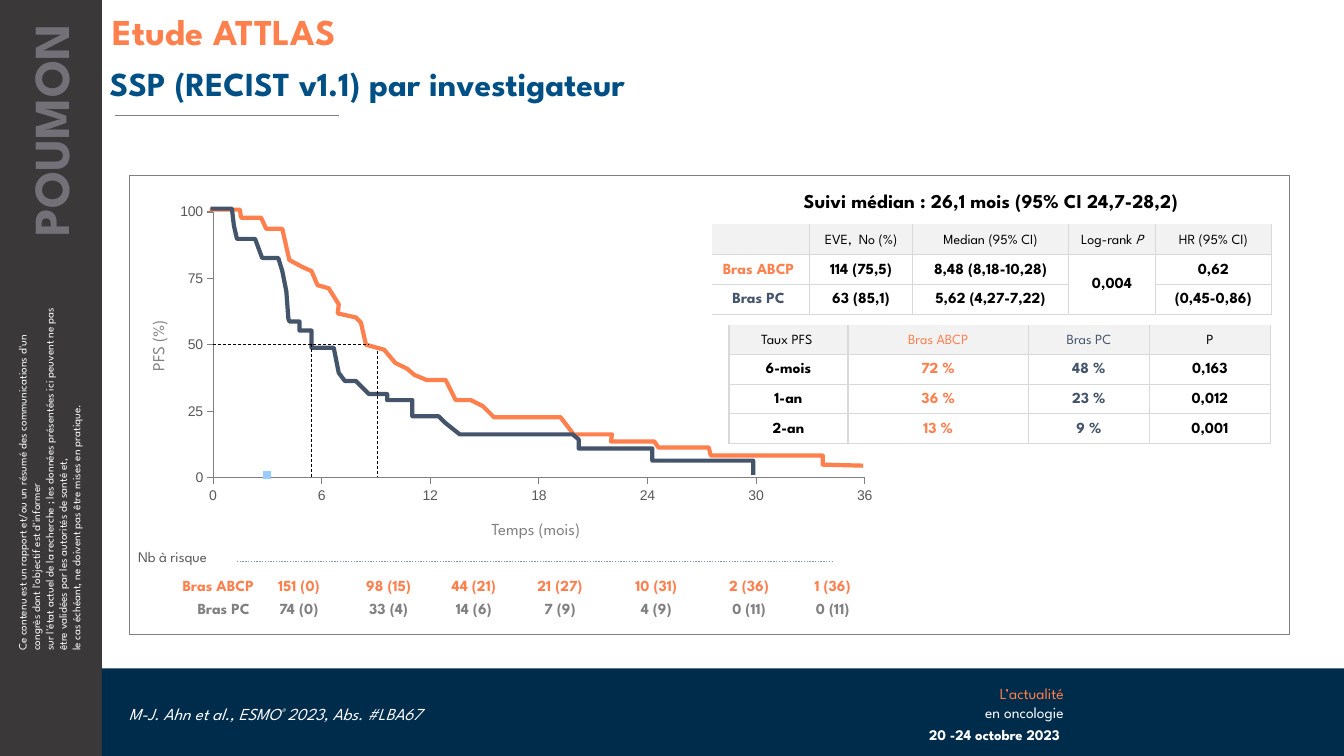
import pptx
import pptx.chart.data
import pptx.dml.color
import pptx.enum.chart
import pptx.enum.dml
import pptx.enum.shapes
import pptx.enum.text
import pptx.oxml
import pptx.oxml.ns
import pptx.util
from dataclasses import dataclass

Inches = pptx.util.Inches
Pt = pptx.util.Pt
Align = pptx.enum.text.PP_ALIGN
Anchor = pptx.enum.text.MSO_ANCHOR
Dash = pptx.enum.dml.MSO_LINE
Shape = pptx.enum.shapes.MSO_SHAPE
qn = pptx.oxml.ns.qn


@dataclass(frozen=True)
class Theme:
    font: str = "League Spartan"
    plain: str = "Arial"
    orange: str = "FF7F4D"
    slate: str = "44546A"
    blue: str = "005086"
    navy: str = "002C4C"
    coal: str = "3A3839"
    mauve: str = "737078"
    gray: str = "808080"
    dark: str = "595959"
    grid: str = "D9D9D9"
    pale: str = "F2F2F2"
    steel: str = "8497B0"
    sky: str = "99CCFF"
    white: str = "FFFFFF"
    black: str = "000000"
    title: float = 26
    head: float = 24
    side: float = 36
    lead: float = 14
    body: float = 12
    cell: float = 11
    date: float = 10.5
    small: float = 10
    tiny: float = 8


T = Theme()
NONE = "{2D5ABB26-0587-4C30-8999-92F81FD0307C}"
ABCP = [
    (2.08, 2.08), (2.38, 2.08), (2.39, 2.16), (2.59, 2.16), (2.64, 2.27), (2.8, 2.27),
    (2.87, 2.58), (3, 2.65), (3.09, 2.69), (3.15, 2.83), (3.26, 2.86), (3.36, 3.02),
    (3.35, 3.11), (3.53, 3.15), (3.58, 3.2), (3.63, 3.42), (3.81, 3.47), (3.92, 3.6),
    (4.04, 3.66), (4.11, 3.72), (4.23, 3.77), (4.42, 3.77), (4.52, 3.97), (4.67, 3.97),
    (4.79, 4.03), (4.9, 4.14), (5.56, 4.14), (5.69, 4.31), (6.07, 4.31), (6.06, 4.38),
    (6.49, 4.38), (6.53, 4.44), (7.03, 4.44), (7.05, 4.52), (8.16, 4.52), (8.16, 4.61),
    (8.56, 4.62)]
PC = [
    (2.09, 2.07), (2.3, 2.07), (2.32, 2.24), (2.35, 2.37), (2.53, 2.37), (2.6, 2.56),
    (2.76, 2.56), (2.8, 2.69), (2.84, 2.89), (2.86, 3.16), (2.87, 3.19), (2.97, 3.19),
    (2.97, 3.28), (3.09, 3.28), (3.09, 3.45), (3.31, 3.45), (3.36, 3.7), (3.42, 3.78),
    (3.53, 3.78), (3.66, 3.91), (3.84, 3.91), (3.84, 3.97), (4.09, 3.97), (4.09, 4.13),
    (4.35, 4.13), (4.41, 4.19), (4.56, 4.31), (5.68, 4.31), (5.74, 4.36), (5.74, 4.45),
    (6.47, 4.45), (6.47, 4.57), (7.47, 4.57), (7.47, 4.71)]


def rgb(tone):
    return pptx.dml.color.RGBColor.from_string(tone)


def put(frame, parts, size, tone, bold=False, align=Align.LEFT, space=None):
    para = frame.paragraphs[0]
    para.alignment = align
    para.line_spacing = space
    for part in [parts] if isinstance(parts, str) else parts:
        if part == "\n":
            para.add_line_break()
            continue
        word, style = (part, {}) if isinstance(part, str) else part
        run = para.add_run()
        run.text = word
        run.font.name = T.font
        run.font.size = Pt(size)
        run.font.bold = bold
        run.font.italic = style.get("italic", False)
        run.font.color.rgb = rgb(style.get("tone", tone))
        if "raise" in style:
            run.font._element.set("baseline", style["raise"])
    if not parts:
        para._p.append(pptx.oxml.parse_xml(
            f'<a:endParaRPr {pptx.oxml.ns.nsdecls("a")} sz="{size * 100}"/>'))


def label(slide, box, parts, size, tone, turn=0, anchor=Anchor.TOP, right=0.1, **look):
    shape = slide.shapes.add_textbox(*map(Inches, box))
    shape.rotation = turn
    frame = shape.text_frame
    frame.word_wrap = True
    frame.vertical_anchor = anchor
    frame.margin_right = Inches(right)
    put(frame, parts, size, tone, **look)


def panel(slide, box, fill=None, kind=Shape.RECTANGLE):
    shape = slide.shapes.add_shape(kind, *map(Inches, box))
    shape.shadow.inherit = False
    if fill:
        shape.fill.solid()
        shape.fill.fore_color.rgb = rgb(fill)
        shape.line.fill.background()
    else:
        shape.adjustments[0] = 0
        shape.fill.background()
        shape.line.color.rgb = rgb(T.gray)
        shape.line.width = Pt(0.75)


def rule(slide, ends, tone, width, dash=None):
    line = slide.shapes.add_connector(pptx.enum.shapes.MSO_CONNECTOR.STRAIGHT, *map(Inches, ends))
    line.line.color.rgb = rgb(tone)
    line.line.width = Pt(width)
    line.line.dash_style = dash
    line._element.spPr.append(pptx.oxml.parse_xml(f"<a:effectLst {pptx.oxml.ns.nsdecls('a')}/>"))


def curve(slide, points, tone):
    dots = [(Inches(x), Inches(y)) for x, y in points]
    form = slide.shapes.build_freeform(*dots[0])
    form.add_line_segments(dots[1:], close=False)
    shape = form.convert_to_shape()
    shape.shadow.inherit = False
    shape.fill.background()
    shape.line.color.rgb = rgb(tone)
    shape.line.width = Pt(3)


def table(slide, left, top, cols, rows):
    shape = slide.shapes.add_table(len(rows), len(cols), *map(Inches, (left, top, sum(cols), sum(rows))))
    grid = shape.table
    grid.first_row = grid.horz_banding = False
    grid._tbl.tblPr.find(qn("a:tableStyleId")).text = NONE
    for col, wide in zip(grid.columns, cols):
        col.width = Inches(wide)
    for row, high in zip(grid.rows, rows):
        row.height = Inches(high)
    return grid


def pad(cell, side, edge):
    cell.vertical_anchor = Anchor.MIDDLE
    cell.margin_left = cell.margin_right = Inches(side)
    cell.margin_top = cell.margin_bottom = Inches(edge)


def border(cell, sides):
    for side in sides:
        cell._tc.get_or_add_tcPr().append(pptx.oxml.parse_xml(
            f'<a:ln{side} {pptx.oxml.ns.nsdecls("a")} w="12700"><a:solidFill>'
            f'<a:srgbClr val="{T.grid}"/></a:solidFill></a:ln{side}>'))


def stats(slide, left, top, cols, rows, tones, open_left=False):
    grid = table(slide, left, top, cols, [0.28] * len(rows))
    for r, row in enumerate(rows):
        for c, parts in enumerate(row):
            cell = grid.cell(r, c)
            pad(cell, 0.05, 0.07)
            sides = "LRB" if r == 0 else "LRTB"
            border(cell, sides.replace("L", "") if open_left and c == 0 else sides)
            cell.fill.solid()
            cell.fill.fore_color.rgb = rgb(T.white if r else T.pale)
            put(cell.text_frame, parts, T.cell if r else T.small, tones(r, c),
                bold=r > 0, align=Align.CENTER, space=Pt(11.2))
    return grid


def risk(slide):
    grid = table(slide, 1.31, 5.38, [1.21, 0.89, 0.89, 0.8, 0.91, 1, 0.84, 0.82], [0.34, 0.23, 0.21])
    grid.cell(0, 0).merge(grid.cell(0, 7))
    pad(grid.cell(0, 0), 0.06, 0)
    put(grid.cell(0, 0).text_frame, "Nb à risque", T.date, T.dark)
    rows = [
        (T.orange, ["Bras ABCP", "151 (0)", "98 (15)", "44 (21)", "21 (27)", "10 (31)", "2 (36)", "1 (36)"]),
        (T.gray, ["Bras PC ", "74 (0)", "33 (4)", "14 (6)", "7 (9)", "4 (9)", "0 (11)", "0 (11)"])]
    for r, (tone, row) in enumerate(rows, 1):
        for c, word in enumerate(row):
            pad(grid.cell(r, c), 0, 0)
            put(grid.cell(r, c).text_frame, word, T.cell, tone, bold=True,
                align=Align.CENTER if c else Align.RIGHT)


def plot(slide):
    data = pptx.chart.data.XyChartData()
    series = data.add_series("Series 1")
    for value in (None, None, 1):
        series.add_data_point(None, value)
    kind = pptx.enum.chart.XL_CHART_TYPE.XY_SCATTER
    chart = slide.shapes.add_chart(kind, *map(Inches, (1.37, 2.01, 7.43, 3.14)), data).chart
    area = chart._chartSpace.chart.plotArea
    for point in list(area.iter(qn("c:pt"))):
        if point.findtext(qn("c:v")) in ("None", "", None):
            point.getparent().remove(point)
    chart.has_legend = chart.has_title = False
    chart.font.name = T.plain
    chart.font.size = Pt(T.small)
    chart.font.color.rgb = rgb(T.dark)
    for axis, top, step in ((chart.category_axis, 36, 6), (chart.value_axis, 100, 25)):
        axis.minimum_scale, axis.maximum_scale, axis.major_unit = 0, top, step
        axis.has_major_gridlines = False
        axis.major_tick_mark = pptx.enum.chart.XL_TICK_MARK.OUTSIDE
        axis.tick_labels.number_format = "0"
        axis.tick_labels.number_format_is_linked = False
        axis.format.line.color.rgb = rgb(T.gray)
    line = chart.plots[0].series[0]
    line.format.line.fill.background()
    line.marker.style = pptx.enum.chart.XL_MARKER_STYLE.SQUARE
    line.marker.size = 5
    line.marker.format.fill.solid()
    line.marker.format.fill.fore_color.rgb = rgb(T.sky)
    line.marker.format.line.fill.background()
    for old in area.findall(qn("c:layout")):
        area.remove(old)
    spots = "".join(f'<c:{key} val="{val}"/>' for key, val in (
        ("layoutTarget", "inner"), ("xMode", "edge"), ("yMode", "edge"),
        ("x", 0.1), ("y", 0.03), ("w", 0.87), ("h", 0.84)))
    area.insert(0, pptx.oxml.parse_xml(
        f"<c:layout {pptx.oxml.ns.nsdecls('c')}><c:manualLayout>{spots}</c:manualLayout></c:layout>"))


def main():
    deck = pptx.Presentation()
    deck.slide_width, deck.slide_height = Inches(13.33), Inches(7.5)
    slide = deck.slides.add_slide(deck.slide_layouts[6])
    panel(slide, (0, 0, 1.01, 7.5), T.coal)
    label(slide, (-1.31, 4.37, 3.6, 0.77), [
        "Ce contenu est un rapport et/ou un résumé des communications d'un congrès dont l'objectif est d'informer ",
        "\n", "sur l'état actuel de la recherche ; les données présentées ici peuvent ne pas être validées par les autorités de santé et, ",
        "\n", "le cas échéant, ne doivent pas être mises en pratique."], T.tiny, T.white, turn=270)
    label(slide, (-1.04, 1.18, 3.07, 0.71), "POUMON", T.side, T.mauve, turn=270, right=0.24,
          bold=True, align=Align.RIGHT)
    panel(slide, (1.01, 6.63, 12.32, 0.87), T.navy)
    label(slide, (9.01, 6.74, 1.64, 0.47), ["L’actualité", "\n", ("en oncologie", {"tone": T.white})],
          T.cell, T.orange, align=Align.RIGHT)
    label(slide, (9.01, 7.17, 1.54, 0.27), "20 -24 octobre 2023 ", T.date, T.white, right=0,
          bold=True, align=Align.RIGHT, space=0.9)
    label(slide, (0.99, 0.57, 12.17, 0.55), "SSP (RECIST v1.1) par investigateur", T.head, T.blue, bold=True)
    panel(slide, (1.28, 1.74, 11.51, 4.55), kind=Shape.ROUNDED_RECTANGLE)
    risk(slide)
    rule(slide, (2.35, 5.57, 8.27, 5.57), T.steel, 1, Dash.ROUND_DOT)
    plot(slide)
    label(slide, (0.16, 3.28, 2.81, 0.3), "PFS (%)", T.body, T.gray, turn=270, align=Align.CENTER)
    label(slide, (3, 5.1, 4.63, 0.3), "Temps (mois)", T.body, T.gray, align=Align.CENTER)
    grid = stats(slide, 7.06, 2.22, [0.97, 1.02, 1.55, 0.86, 1.15], [
        [[], "EVE,  No (%)", "Median (95% CI)", ["Log-rank ", ("P", {"italic": True})], "HR (95% CI)"],
        ["Bras ABCP ", "114 (75,5)", "8,48 (8,18-10,28)", "0,004", "0,62"],
        ["Bras PC ", "63 (85,1)", "5,62 (4,27-7,22)", [], "(0,45-0,86)"]],
        lambda r, c: T.black if c else (T.black, T.orange, T.slate)[r], open_left=True)
    grid.cell(1, 3).merge(grid.cell(2, 3))
    rule(slide, (1.14, 1.15, 3.36, 1.15), T.gray, 0.75)
    curve(slide, ABCP, T.orange)
    curve(slide, PC, T.slate)
    label(slide, (6.8, 1.83, 6.06, 0.34), "Suivi médian : 26,1 mois (95% CI 24,7-28,2)", T.lead, T.black,
          bold=True, align=Align.CENTER)
    stats(slide, 7.23, 3.22, [1.18, 1.79, 1.2, 1.2], [
        ["Taux PFS ", "Bras ABCP", "Bras PC", "P"],
        ["6-mois", "72 %", "48 %", "0,163"],
        ["1-an", "36 %", "23 %", "0,012"],
        ["2-an", "13 %", "9 %", "0,001"]],
        lambda r, c: (T.black, T.orange, T.slate, T.black)[c])
    for ends in ((2.11, 3.42, 3.65, 3.42), (3.09, 3.41, 3.09, 4.73), (3.74, 3.48, 3.74, 4.73)):
        rule(slide, ends, T.black, 0.5, Dash.DASH)
    slant = {"italic": True}
    label(slide, (1.18, 6.66, 7.52, 0.84), [
        ("M-J. Ahn et al., ESMO", slant), ("® ", {"italic": True, "raise": "30000"}),
        ("2023, Abs. #LBA67", slant)], T.body, T.white, anchor=Anchor.MIDDLE)
    label(slide, (1.02, 0.09, 12.18, 0.4), "Etude ATTLAS", T.title, T.orange, bold=True, space=0.9)
    deck.save("out.pptx")


if __name__ == "__main__":
    main()
